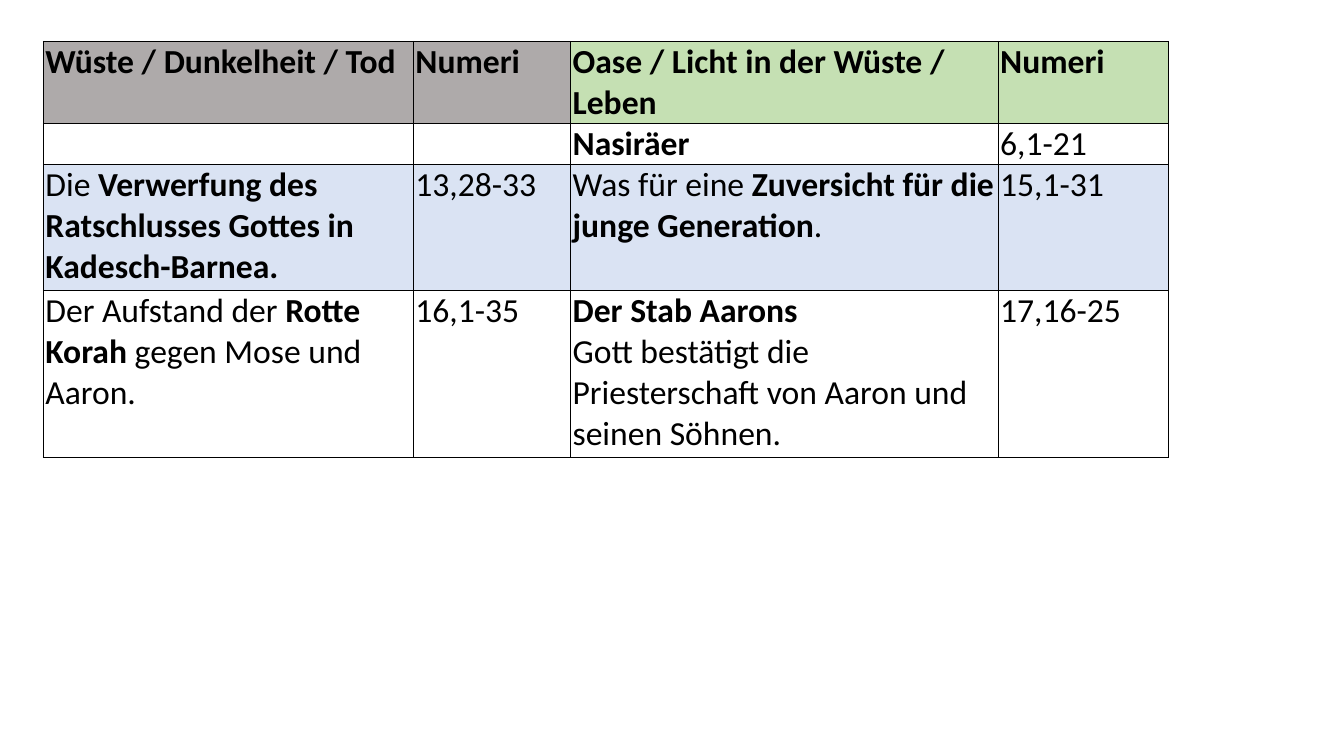
from dataclasses import dataclass

from lxml.etree import SubElement
from pptx import Presentation
from pptx.dml.color import RGBColor
from pptx.oxml.ns import qn
from pptx.util import Emu, Inches, Pt

SLIDE_W, SLIDE_H = Inches(13.33), Inches(7.5)
LEFT, TOP = 3.23, 5.47
COLS = (27.53, 11.7, 31.81, 12.68)
ROWS = (10.67, 5.33, 16.67, 22.13)
BLACK, GREY, GREEN, BLUE = "000000", "AEAAAA", "C5E0B3", "DAE3F3"
FONT = {"name": "Calibri", "size": Pt(24)}
MARGINS = {
    "margin_left": Inches(0.02),
    "margin_right": Inches(0.02),
    "margin_top": 0,
    "margin_bottom": 0,
}
PLAIN_STYLE = {"first_row": False, "horz_banding": False}


@dataclass(frozen=True)
class Run:
    text: str
    bold: bool = False


@dataclass(frozen=True)
class Entry:
    paragraphs: tuple[tuple[Run, ...], ...] = ()
    fill: str | None = None


def plain(text: str, fill: str | None = None) -> Entry:
    return Entry(((Run(text),),), fill)


def bold(text: str, fill: str | None = None) -> Entry:
    return Entry(((Run(text, True),),), fill)


ENTRIES = (
    (
        bold("Wüste / Dunkelheit / Tod", GREY),
        bold("Numeri", GREY),
        bold("Oase / Licht in der Wüste / Leben", GREEN),
        bold("Numeri", GREEN),
    ),
    (Entry(), Entry(), bold("Nasiräer"), plain("6,1-21")),
    (
        Entry(((
            Run("Die "),
            Run("Verwerfung des Ratschlusses Gottes in Kadesch-Barnea.", True),
        ),), BLUE),
        plain("13,28-33", BLUE),
        Entry(((
            Run("Was für eine "),
            Run("Zuversicht für die junge Generation", True),
            Run("."),
        ),), BLUE),
        plain("15,1-31", BLUE),
    ),
    (
        Entry(((
            Run("Der Aufstand der "),
            Run("Rotte Korah", True),
            Run(" gegen Mose und Aaron."),
        ),)),
        plain("16,1-35"),
        Entry((
            (Run("Der Stab Aarons", True),),
            (Run("Gott bestätigt die Priesterschaft von Aaron und seinen Söhnen."),),
        )),
        plain("17,16-25"),
    ),
)


def share_x(percent: float) -> Emu:
    return Emu(round(SLIDE_W * percent / 100))


def share_y(percent: float) -> Emu:
    return Emu(round(SLIDE_H * percent / 100))


def color(value: str) -> RGBColor:
    return RGBColor.from_string(value)


def apply(target: object, values: dict) -> None:
    for name, value in values.items():
        setattr(target, name, value)


def draw_borders(cell) -> None:
    props = cell._tc.get_or_add_tcPr()
    for index, side in enumerate(("lnL", "lnR", "lnT", "lnB")):
        line = SubElement(props, qn(f"a:{side}"), w=str(Pt(1)))
        fill = SubElement(line, qn("a:solidFill"))
        SubElement(fill, qn("a:srgbClr"), val=BLACK)
        props.remove(line)
        props.insert(index, line)


def draw_entry(cell, entry: Entry) -> None:
    apply(cell, MARGINS)
    if entry.fill:
        cell.fill.solid()
        cell.fill.fore_color.rgb = color(entry.fill)
    else:
        cell.fill.background()
    draw_borders(cell)
    tf = cell.text_frame
    for index, runs in enumerate(entry.paragraphs):
        p = tf.add_paragraph() if index else tf.paragraphs[0]
        for run in runs:
            r = p.add_run()
            r.text = run.text
            apply(r.font, FONT | {"bold": run.bold})
            r.font.color.rgb = color(BLACK)


def draw_table(slide) -> None:
    table = slide.shapes.add_table(
        len(ROWS), len(COLS), share_x(LEFT), share_y(TOP),
        share_x(sum(COLS)), share_y(sum(ROWS)),
    ).table
    apply(table, PLAIN_STYLE)
    for column, width in zip(table.columns, COLS):
        column.width = share_x(width)
    for row, height, entries in zip(table.rows, ROWS, ENTRIES):
        row.height = share_y(height)
        for cell, entry in zip(row.cells, entries):
            draw_entry(cell, entry)


def main() -> None:
    prs = Presentation()
    apply(prs, {"slide_width": SLIDE_W, "slide_height": SLIDE_H})
    draw_table(prs.slides.add_slide(prs.slide_layouts[6]))
    prs.save("out.pptx")


if __name__ == "__main__":
    main()
